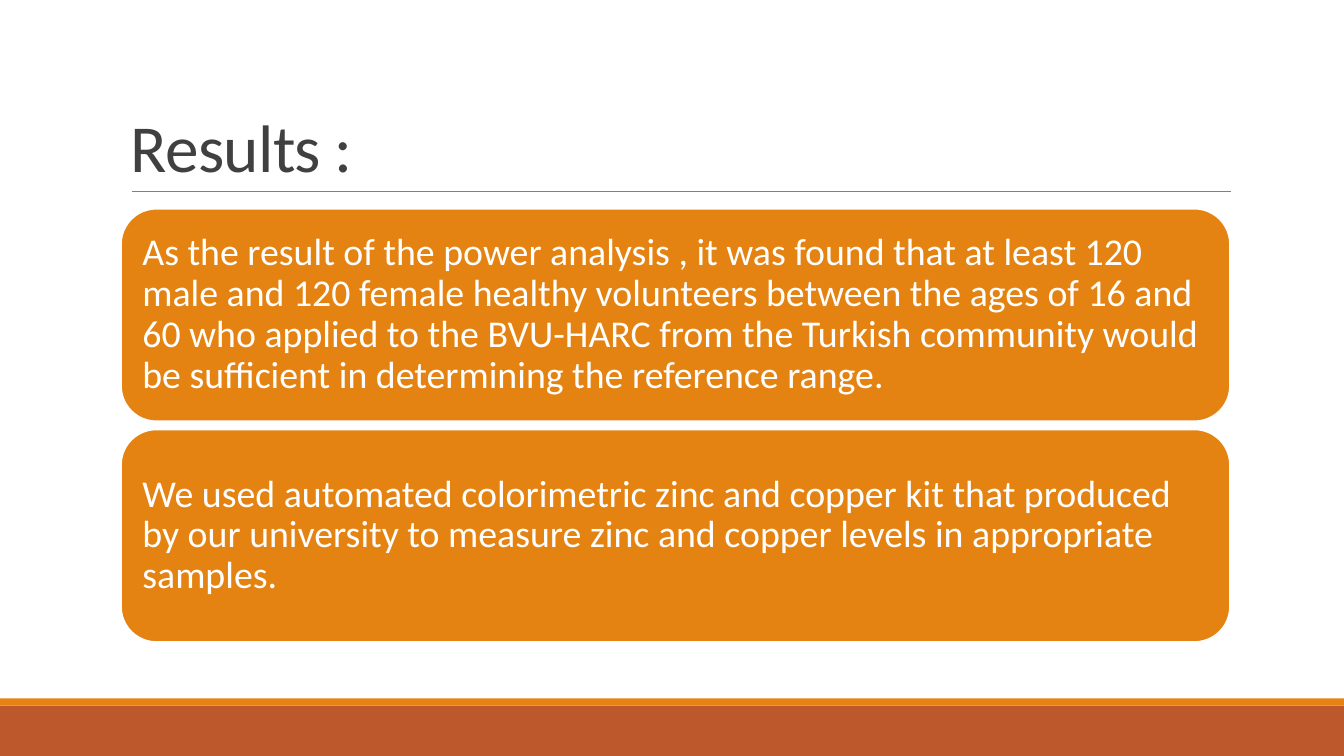
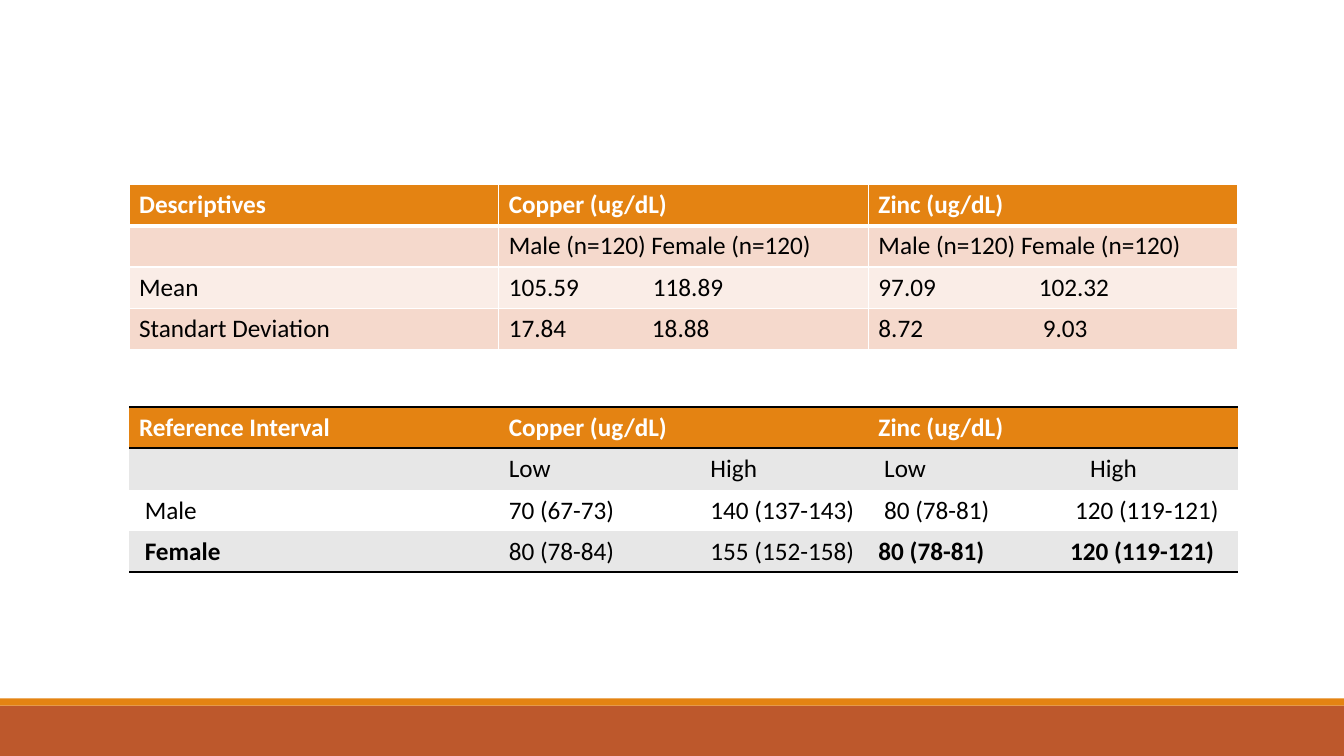
"""Build two slides on zinc and copper reference ranges."""
from lxml.etree import SubElement
from pptx import Presentation
from pptx.dml.color import RGBColor
from pptx.enum.shapes import MSO_CONNECTOR, MSO_SHAPE
from pptx.enum.text import MSO_ANCHOR, PP_ALIGN
from pptx.oxml.ns import qn
from pptx.util import Inches, Pt

COLORS = {
    "orange": "E48312", "rust": "BD582C", "rule": "808080", "title": "404040",
    "white": "FFFFFF", "black": "000000", "pink": "F5D9CC", "blush": "FAEDE7",
    "gray": "E7E7E7",
}
FONT = "Calibri"
NO_STYLE = "{2D5ABB26-0587-4C30-8999-92F81FD0307C}"


def color(name):
    return RGBColor.from_string(COLORS[name])


def style(paragraph, size, name, bold=False):
    paragraph.font.name = FONT
    paragraph.font.size = Pt(size)
    paragraph.font.bold = bold
    paragraph.font.color.rgb = color(name)


deck = Presentation()
deck.slide_width = Inches(13.33)
deck.slide_height = Inches(7.5)
pages = [deck.slides.add_slide(deck.slide_layouts[6]) for _ in range(2)]
results_page, tables_page = pages

for page in pages:
    for top, height, name in ((7, 0.5, "rust"), (6.93, 0.07, "orange")):
        band = page.shapes.add_shape(
            MSO_SHAPE.RECTANGLE, 0, Inches(top), deck.slide_width, Inches(height))
        band.shadow.inherit = False
        band.fill.solid()
        band.fill.fore_color.rgb = color(name)
        band.line.fill.background()

rule = results_page.shapes.add_connector(
    MSO_CONNECTOR.STRAIGHT, Inches(1.31), Inches(1.9), Inches(12.21), Inches(1.9))
rule.line.color.rgb = color("rule")
rule.line.width = Pt(0.5)
SubElement(rule._element.spPr, qn("a:effectLst"))

title = results_page.shapes.add_textbox(Inches(1.2), Inches(0.31), Inches(11), Inches(1.59))
title.text_frame.word_wrap = True
title.text_frame.vertical_anchor = MSO_ANCHOR.BOTTOM
paragraph = title.text_frame.paragraphs[0]
paragraph.text = "Results :"
paragraph.line_spacing = 0.85
style(paragraph, 48, "title")
paragraph._p.pPr.find(qn("a:defRPr")).set("spc", "-50")

findings = (
    "As the result of the power analysis , it was found that at least 120 male and 120 "
    "female healthy volunteers between the ages of 16 and 60 who applied to the BVU-HARC "
    "from the Turkish community would be sufficient in determining the reference range.",
    "We used automated colorimetric zinc and copper kit that produced by our university "
    "to measure zinc and copper levels in appropriate samples.",
)
for index, finding in enumerate(findings):
    card = results_page.shapes.add_shape(
        MSO_SHAPE.ROUNDED_RECTANGLE, Inches(1.2), Inches(2.07 + 2.19 * index),
        Inches(11), Inches(2.11))
    card.shadow.inherit = False
    card.fill.solid()
    card.fill.fore_color.rgb = color("orange")
    card.line.color.rgb = color("white")
    card.line.width = Pt(1.25)
    frame = card.text_frame
    frame.word_wrap = True
    frame.vertical_anchor = MSO_ANCHOR.MIDDLE
    frame.margin_left = frame.margin_right = Inches(0.11)
    frame.margin_top = frame.margin_bottom = Inches(0.11)
    paragraph = frame.paragraphs[0]
    paragraph.text = finding
    paragraph.alignment = PP_ALIGN.LEFT
    paragraph.line_spacing = 0.9
    style(paragraph, 27, "white")

GRID = {edge: ("white", 1) for edge in "LRTB"}
HEAVY = ("black", 2)
tables = (
    {
        "top": 1.83,
        "heights": (0.41, 0.41, 0.41, 0.41),
        "fills": ("orange", "pink", "blush", "pink"),
        "borders": (GRID | {"B": ("white", 3)}, GRID | {"T": ("white", 3)}, GRID, GRID),
        "stops": ((), (), (1.43, 1.59), (1.42, 1.63)),
        "bold": ((0, 0), (0, 1), (0, 2)),
        "rows": (
            (["Descriptives"], ["Copper (ug/dL)"], ["Zinc (ug/dL)"]),
            ([], ["Male (n=120) Female (n=120)"], ["Male (n=120) Female (n=120)"]),
            (["Mean"], ["105.59", "118.89"], ["97.09", "102.32"]),
            (["Standart Deviation"], ["17.84", "18.88"], ["8.72", "9.03"]),
        ),
    },
    {
        "top": 4.04,
        "heights": (0.4, 0.42, 0.4, 0.4),
        "fills": ("orange", "gray", "white", "gray"),
        "borders": ({"T": HEAVY, "B": HEAVY}, {"T": HEAVY}, {}, {"B": HEAVY}),
        "stops": ((), (2, 2.1), (2, 1.95), (2, 1.9)),
        "bold": ((0, 0), (0, 1), (0, 2), (3, 0), (3, 2)),
        "rows": (
            (["Reference Interval"], ["Copper (ug/dL)"], ["Zinc (ug/dL)"]),
            ([], ["Low", "High"], [" Low", "High"]),
            ([" Male"], ["70 (67-73)", "140 (137-143)"], [" 80 (78-81)", "120 (119-121)"]),
            ([" Female"], ["80 (78-84)", "155 (152-158)"], ["80 (78-81)", "120 (119-121)"]),
        ),
    },
)
for data in tables:
    table = tables_page.shapes.add_table(
        4, 3, Inches(1.28), Inches(data["top"]), Inches(11), Inches(1.62)).table
    table.first_row = table.horz_banding = False
    table._tbl.tblPr.find(qn("a:tableStyleId")).text = NO_STYLE
    for row_index, row in enumerate(data["rows"]):
        table.rows[row_index].height = Inches(data["heights"][row_index])
        for column_index, values in enumerate(row):
            cell = table.cell(row_index, column_index)
            properties = cell._tc.get_or_add_tcPr()
            borders = data["borders"][row_index]
            for edge in "LRTB":
                line = SubElement(properties, qn(f"a:ln{edge}"))
                if edge in borders:
                    name, width = borders[edge]
                    line.set("w", str(Pt(width)))
                    fill = SubElement(line, qn("a:solidFill"))
                    SubElement(fill, qn("a:srgbClr")).set("val", COLORS[name])
                else:
                    SubElement(line, qn("a:noFill"))
            cell.fill.solid()
            cell.fill.fore_color.rgb = color(data["fills"][row_index])
            paragraph = cell.text_frame.paragraphs[0]
            paragraph.text = "\t".join(values)
            if len(values) == 2:
                stops = SubElement(paragraph._p.get_or_add_pPr(), qn("a:tabLst"))
                position = Inches(data["stops"][row_index][column_index - 1])
                SubElement(stops, qn("a:tab"), pos=str(position), algn="l")
            style(paragraph, 18, "white" if row_index == 0 else "black",
                  (row_index, column_index) in data["bold"])

deck.save("out.pptx")
